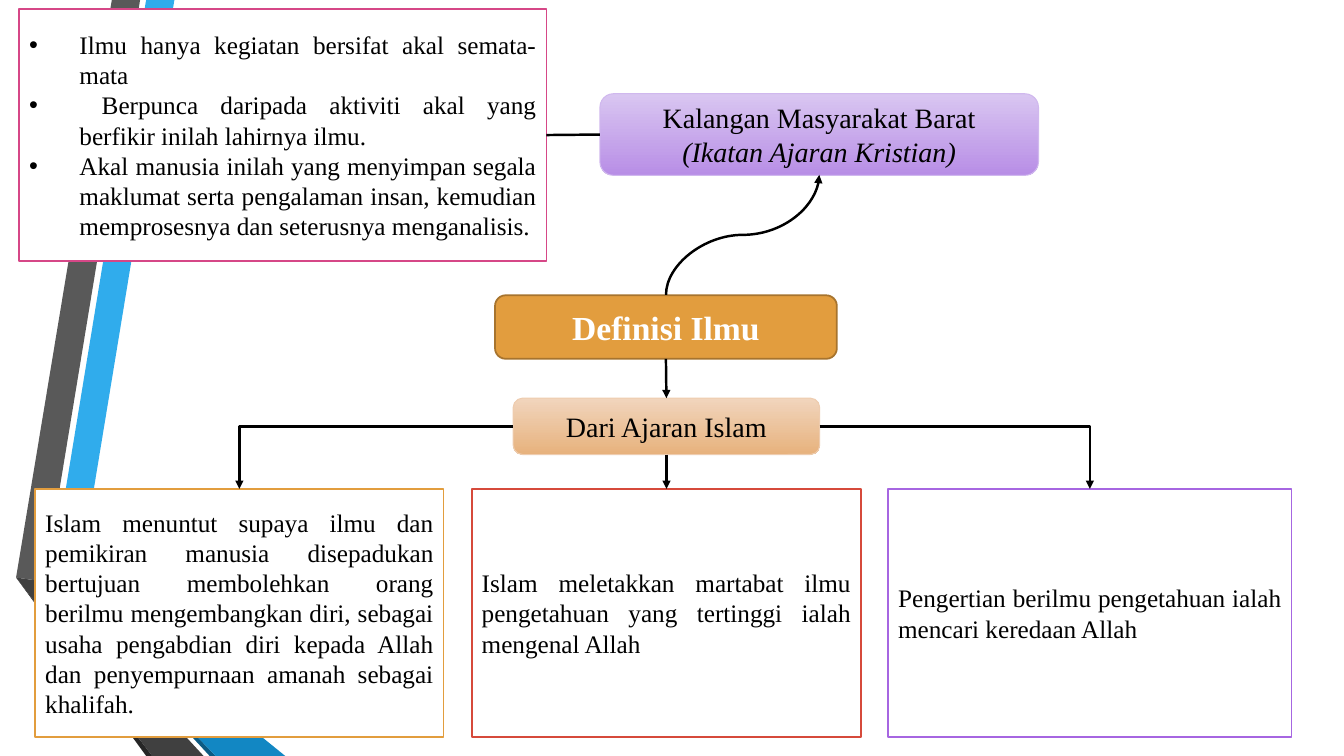
from lxml.etree import SubElement
from pptx import Presentation
from pptx.dml.color import RGBColor
from pptx.enum.shapes import MSO_CONNECTOR, MSO_SHAPE
from pptx.enum.text import MSO_ANCHOR, PP_ALIGN
from pptx.oxml.ns import qn
from pptx.util import Inches, Pt

FONT = "Times New Roman"
BLACK = RGBColor(0, 0, 0)
WHITE = RGBColor(255, 255, 255)
ORANGE = RGBColor(0xE2, 0x9D, 0x3E)
BROWN = RGBColor(0xA7, 0x74, 0x2E)
PINK = RGBColor(0xD6, 0x47, 0x87)
RED = RGBColor(0xD6, 0x4A, 0x3B)
PURPLE = RGBColor(0xA6, 0x66, 0xE1)
LILAC_EDGE = RGBColor(0xD0, 0xB8, 0xEE)
LILAC = [RGBColor(0xD9, 0xC6, 0xF1), RGBColor(0xB8, 0x8E, 0xE6)]
PEACH_EDGE = RGBColor(0xEE, 0xCC, 0xAF)
PEACH = [RGBColor(0xF1, 0xD5, 0xBD), RGBColor(0xE7, 0xB2, 0x7D)]

# Content
TITLE = ["Definisi Ilmu"]
WEST = ["Kalangan Masyarakat Barat", "(Ikatan Ajaran Kristian)"]
WEST_POINTS = [
    "Ilmu hanya kegiatan bersifat akal semata-mata",
    " Berpunca daripada aktiviti akal yang berfikir inilah lahirnya ilmu.",
    "Akal manusia inilah yang menyimpan segala maklumat serta pengalaman insan, "
    "kemudian memprosesnya dan seterusnya menganalisis.",
]
ISLAM = ["Dari Ajaran Islam"]
# left, width, edge colour, text
ISLAM_POINTS = [
    (0.35, 4.05, ORANGE,
     "Islam menuntut supaya ilmu dan pemikiran manusia disepadukan bertujuan "
     "membolehkan orang berilmu mengembangkan diri, sebagai usaha pengabdian diri "
     "kepada Allah dan penyempurnaan amanah sebagai khalifah."),
    (4.68, 3.86, RED,
     "Islam meletakkan martabat ilmu pengetahuan yang tertinggi ialah mengenal Allah"),
    (8.81, 4.0, PURPLE,
     "Pengertian berilmu pengetahuan ialah mencari keredaan Allah"),
]
# Ribbon behind the boxes: colour, corner points
RIBBON = [
    (RGBColor(0x30, 0xAC, 0xEC), [(0.5, 5.78), (0.77, 5.83), (1.73, 0), (1.45, 0)]),
    (RGBColor(0x59, 0x59, 0x59), [(1.39, 0), (1.11, 0), (0.16, 5.73), (0.44, 5.77)]),
    (RGBColor(0x26, 0x26, 0x26), [(0.16, 5.73), (1.45, 7.5), (1.51, 7.5)]),
    (RGBColor(0x0C, 0x5A, 0x82), [(0.5, 5.79), (2.08, 7.5), (2.14, 7.5)]),
    (RGBColor(0x12, 0x87, 0xC3),
     [(0.5, 5.79), (2.14, 7.5), (2.83, 7.5), (0.77, 5.83), (0.5, 5.78)]),
    (RGBColor(0x40, 0x40, 0x40),
     [(2.02, 7.5), (0.48, 5.83), (0.43, 5.77), (0.16, 5.73), (1.51, 7.5)]),
]

deck = Presentation()
deck.slide_width, deck.slide_height = Inches(13.33), Inches(7.5)
page = deck.slides.add_slide(deck.slide_layouts[6])


def write(box, lines, size=18, color=BLACK, bold=False, italic_from=None,
          align=PP_ALIGN.JUSTIFY, bullet=None):
    frame = box.text_frame
    frame.word_wrap = True
    frame.vertical_anchor = MSO_ANCHOR.MIDDLE
    for index, line in enumerate(lines):
        para = frame.paragraphs[0] if index == 0 else frame.add_paragraph()
        para.alignment = align
        span = para.add_run()
        span.text = line
        span.font.name, span.font.size = FONT, Pt(size)
        span.font.color.rgb = color
        span.font.bold = bold
        span.font.italic = italic_from is not None and index >= italic_from
        if bullet:
            props = para._p.get_or_add_pPr()
            props.set("marL", str(Inches(0.5)))
            props.set("indent", str(-Inches(0.5)))
            SubElement(props, qn("a:buFont")).set("typeface", "Arial")
            SubElement(props, qn("a:buChar")).set("char", bullet)


def add_box(left, top, width, height, fill, edge, weight=1.25, kind=MSO_SHAPE.RECTANGLE):
    box = page.shapes.add_shape(
        kind, Inches(left), Inches(top), Inches(width), Inches(height))
    box.shadow.inherit = False
    if isinstance(fill, list):
        box.fill.gradient()
        box.fill.gradient_angle = 270
        for stop, color in zip(box.fill.gradient_stops, fill):
            stop.color.rgb = color
    else:
        box.fill.solid()
        box.fill.fore_color.rgb = fill
    box.line.color.rgb = edge
    box.line.width = Pt(weight)
    return box


def add_link(start, end, kind=MSO_CONNECTOR.STRAIGHT, arrow=True):
    link = page.shapes.add_connector(kind, *(Inches(n) for n in (*start, *end)))
    link.line.color.rgb = BLACK
    link.line.width = Pt(1.75)
    if arrow:
        SubElement(link.line._get_or_add_ln(), qn("a:tailEnd")).set("type", "triangle")
    SubElement(link._element.spPr, qn("a:effectLst"))
    return link


def join(first, first_side, second, second_side, arrow=True):
    link = add_link((0, 0), (1, 1), arrow=arrow)
    link.begin_connect(first, first_side)
    link.end_connect(second, second_side)


# Ribbon
for color, corners in RIBBON:
    points = [(Inches(x), Inches(y)) for x, y in corners]
    builder = page.shapes.build_freeform(*points[0])
    builder.add_line_segments(points[1:], close=True)
    strip = builder.convert_to_shape()
    strip.shadow.inherit = False
    strip.fill.solid()
    strip.fill.fore_color.rgb = color
    strip.line.fill.background()

# Boxes
ROUND = MSO_SHAPE.ROUNDED_RECTANGLE
west = add_box(5.95, 0.93, 4.35, 0.81, LILAC, LILAC_EDGE, 0.75, ROUND)
write(west, WEST, size=20, italic_from=1, align=PP_ALIGN.CENTER)
west_points = add_box(0.19, 0.09, 5.23, 2.5, WHITE, PINK)
write(west_points, WEST_POINTS, bullet="•")
islam = add_box(5.09, 3.95, 3.04, 0.56, PEACH, PEACH_EDGE, 0.75, ROUND)
write(islam, ISLAM, size=20, align=PP_ALIGN.CENTER)
islam_points = []
for left, width, edge, text in ISLAM_POINTS:
    box = add_box(left, 4.85, width, 2.46, WHITE, edge)
    write(box, [text])
    islam_points.append(box)
title = add_box(4.91, 2.93, 3.39, 0.63, ORANGE, BROWN, kind=ROUND)
write(title, TITLE, size=24, color=WHITE, bold=True, align=PP_ALIGN.CENTER)

# Curved arrow from the title up to the west box, turned to leave vertically
curve = add_link((6.77, 1.57), (7.96, 3.09), MSO_CONNECTOR.CURVE)
for name, value in (("rot", "5400000"), ("flipH", "1"), ("flipV", "1")):
    curve._element.spPr.xfrm.set(name, value)

# Straight links
join(west, 1, west_points, 3, arrow=False)
join(islam, 2, islam_points[1], 0)
join(title, 2, islam, 0)

# One-bend arrows to the outer boxes
for start_x, (left, width, _, _) in ((5.09, ISLAM_POINTS[0]), (8.13, ISLAM_POINTS[2])):
    bend = add_link((start_x, 4.23), (left + width / 2, 4.85), MSO_CONNECTOR.ELBOW)
    bend._element.spPr.find(qn("a:prstGeom")).set("prst", "bentConnector2")

deck.save("out.pptx")
